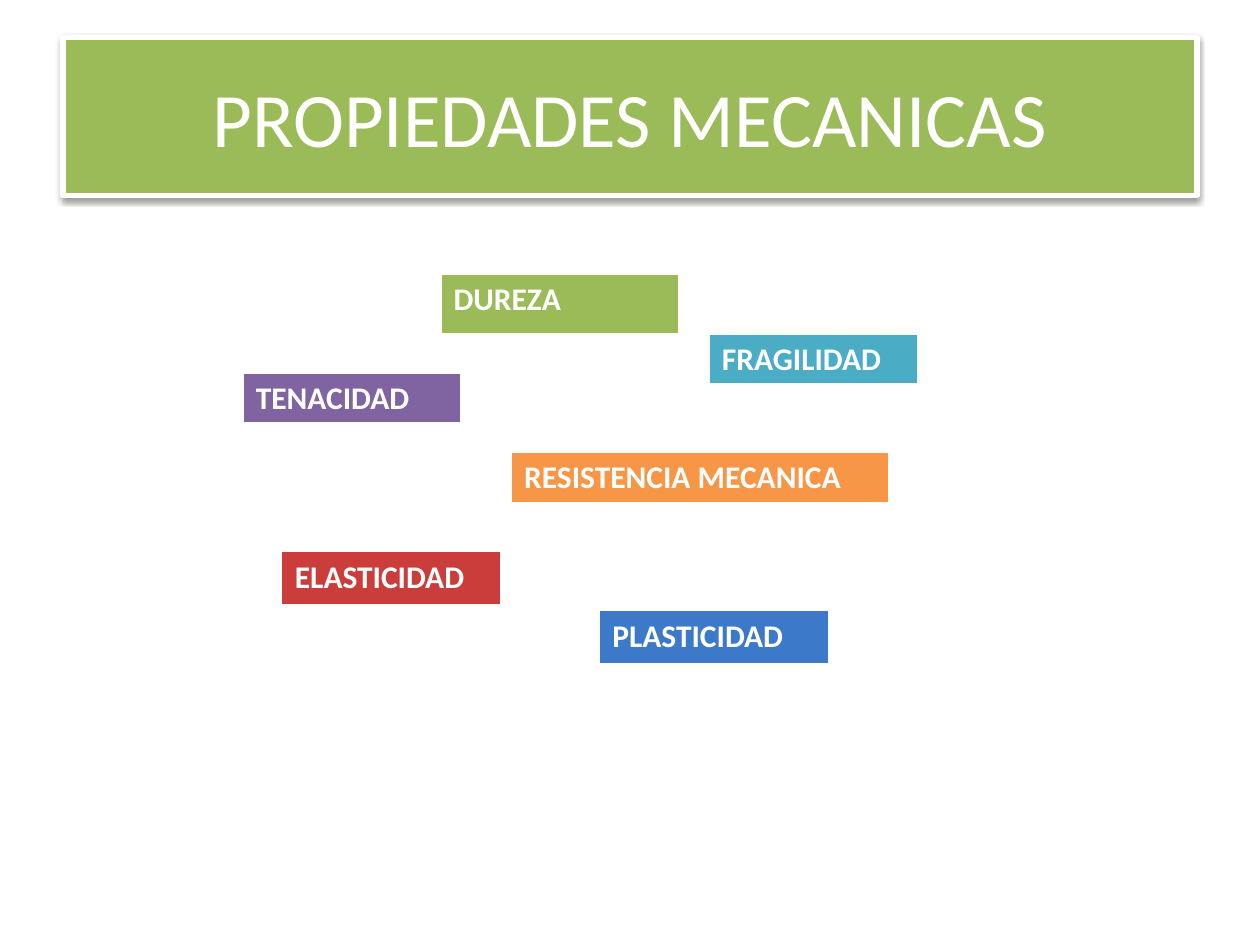
from lxml import etree
from pptx import Presentation, util as u
from pptx.dml.color import RGBColor
from pptx.enum import text as t
from pptx.oxml import parse_xml
from pptx.oxml.ns import nsdecls

HUES = {"white": "FFFFFF", "green": "9BBB59", "aqua": "4BACC6", "violet": "8064A2",
        "orange": "F79646", "red": "CB3D3A", "blue": "3C7AC9"}
WIDE, HIGH = 10, 7.5
LABELS = [
    ("DUREZA", "green", 3.5, 2.18, 1.89, 0.48, True),
    ("FRAGILIDAD", "aqua", 5.63, 2.65, 1.65, 0.41, True),
    ("TENACIDAD", "violet", 1.93, 2.96, 1.73, 0.41, True),
    ("RESISTENCIA MECANICA", "orange", 4.06, 3.59, 2.99, 0.41, True),
    ("ELASTICIDAD", "red", 2.24, 4.38, 1.73, 0.41, False),
    ("PLASTICIDAD", "blue", 4.76, 4.85, 1.81, 0.41, False),
]


def color(name):
    """Return the named colour."""
    return RGBColor.from_string(HUES[name])


def paint(item, name):
    """Give a shape or cell a solid fill."""
    item.fill.solid()
    item.fill.fore_color.rgb = color(name)


def write(frame, words, size=18, bold=False, hue="white", align=t.PP_ALIGN.LEFT):
    """Write one formatted paragraph into a text frame."""
    par = frame.paragraphs[0]
    par.alignment = align
    run = par.add_run()
    run.text = words
    font = run.font
    font.name, font.size, font.bold = "Calibri", u.Pt(size), bold
    font.color.rgb = color(hue)


def shade(shape):
    """Cast a soft shadow straight below a shape."""
    shape.shadow.inherit = False
    cast = shape.element.spPr.find("{*}effectLst")
    cast.append(parse_xml(
        f'<a:outerShdw {nsdecls("a")} blurRad="{u.Pt(3.1)}" dist="{u.Pt(1.6)}" dir="5400000" '
        'rotWithShape="0"><a:srgbClr val="000000"><a:alpha val="38000"/></a:srgbClr></a:outerShdw>'))


def edge(cell, lined):
    """Set white cell borders with a thick bottom, or none."""
    props = cell._tc.get_or_add_tcPr()
    paint_xml = f'<a:solidFill><a:srgbClr val="{HUES["white"]}"/></a:solidFill>' if lined else "<a:noFill/>"
    for spot, (side, width) in enumerate(zip("LRTB", (1, 1, 1, 3))):
        props.insert(spot, etree.fromstring(
            f'<a:ln{side} {nsdecls("a")} w="{u.Pt(width)}">{paint_xml}</a:ln{side}>'))


def banner(slide, words):
    """Format the title placeholder as a framed banner."""
    title = slide.shapes.title
    title.left, title.top = u.Inches(WIDE * 0.05), u.Inches(HIGH * 0.04)
    title.width, title.height = u.Inches(WIDE * 0.9), u.Inches(1.25)
    paint(title, "green")
    title.line.color.rgb = color("white")
    title.line.width = u.Pt(3)
    shade(title)
    title.text_frame.vertical_anchor = t.MSO_ANCHOR.MIDDLE
    write(title.text_frame, words, size=44, align=t.PP_ALIGN.CENTER)


def label(slide, words, hue, left, top, width, height, lined):
    """Add a one-cell table as a coloured label."""
    box = map(u.Inches, (left, top, width, height))
    cell = slide.shapes.add_table(1, 1, *box).table.cell(0, 0)
    paint(cell, hue)
    edge(cell, lined)
    write(cell.text_frame, words, bold=True)


def main():
    """Build and save the slide."""
    deck = Presentation()
    deck.slide_width, deck.slide_height = u.Inches(WIDE), u.Inches(HIGH)
    slide = deck.slides.add_slide(deck.slide_layouts[5])
    banner(slide, "PROPIEDADES MECANICAS")
    for item in LABELS:
        label(slide, *item)
    deck.save("out.pptx")


if __name__ == "__main__":
    main()
